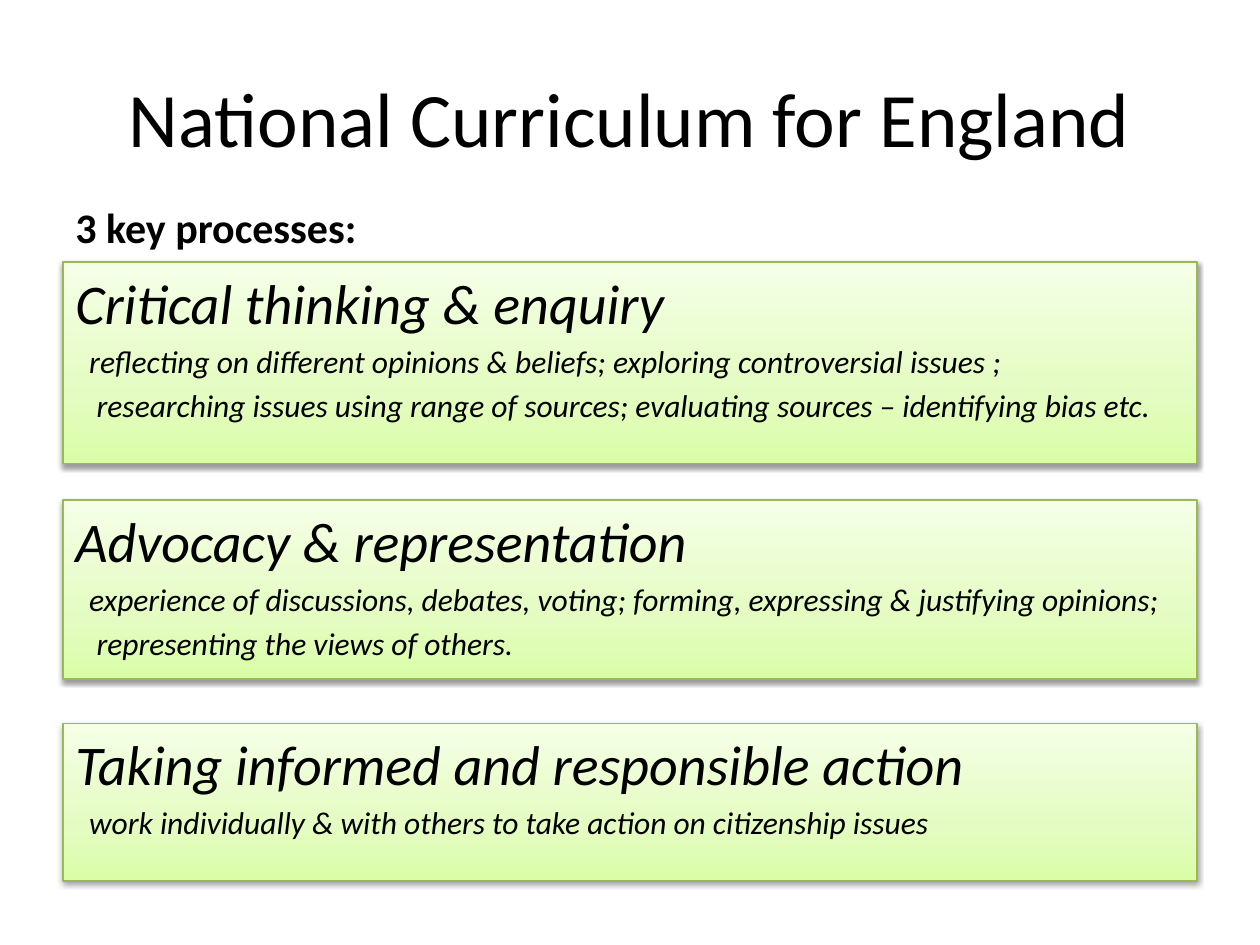
import pptx
import pptx.util
import pptx.dml.color
import pptx.enum.shapes
import pptx.enum.text
import pptx.oxml
import pptx.oxml.ns
from dataclasses import dataclass

Cm, Pt = pptx.util.Cm, pptx.util.Pt
RGB = pptx.dml.color.RGBColor.from_string
ALIGN = pptx.enum.text.PP_ALIGN
ANCHOR = pptx.enum.text.MSO_ANCHOR
NS = pptx.oxml.ns.nsdecls("a")


@dataclass(frozen=True)
class Theme:
    font: str = "Calibri"
    ink: str = "000000"
    edge: str = "98B955"
    fade: tuple = ((0, "DAFDA7"), (35, "E4FCC2"), (100, "F5FFE7"))
    title: int = 44
    head: int = 32
    lead: int = 24
    body: int = 18


THEME = Theme()
LEFT, WIDTH = 1.27, 22.86
STEPS = (0.28, 0.43)  # indents of the first and second detail line

# Top, height, heading and detail lines of each panel
PANELS = (
    (5.28, 4.06, "Critical thinking & enquiry", (
        "reflecting on different opinions & beliefs; exploring controversial issues ;",
        "researching issues using range of sources; evaluating sources – identifying bias etc.")),
    (10.08, 3.61, "Advocacy & representation", (
        "experience of discussions, debates, voting; forming, expressing & justifying opinions;",
        "representing the views of others.")),
    (14.58, 3.18, "Taking informed and responsible action", (
        "work individually & with others to take action on citizenship issues",)),
)


def write(para, text, size, **style):
    """Put one styled run into a paragraph."""
    run = para.add_run()
    run.text = text
    look = {"name": THEME.font, "size": Pt(size), **style}
    for key, value in look.items():
        setattr(run.font, key, value)
    run.font.color.rgb = RGB(THEME.ink)


def label(slide, box, text, size, align, anchor, **style):
    """Add a plain text box with one line."""
    frame = slide.shapes.add_textbox(*map(Cm, box)).text_frame
    frame.word_wrap = True
    frame.vertical_anchor = anchor
    para = frame.paragraphs[0]
    para.alignment = align
    write(para, text, size, **style)


def paint(shape):
    """Give a panel its gradient, outline and soft shadow."""
    shape.fill.gradient()
    shape.fill.gradient_angle = 90
    stops = shape._element.spPr.find(".//" + pptx.oxml.ns.qn("a:gsLst"))
    stops[:] = [pptx.oxml.parse_xml(
        f'<a:gs {NS} pos="{pos * 1000}"><a:srgbClr val="{tone}"/></a:gs>')
        for pos, tone in THEME.fade]
    shape.line.color.rgb = RGB(THEME.edge)
    shape.line.width = Pt(0.75)
    shape.shadow.inherit = False
    effects = shape._element.spPr.find(pptx.oxml.ns.qn("a:effectLst"))
    effects.append(pptx.oxml.parse_xml(
        f'<a:outerShdw {NS} blurRad="40000" dist="20000" dir="5400000" rotWithShape="0">'
        f'<a:srgbClr val="{THEME.ink}"><a:alpha val="38000"/></a:srgbClr></a:outerShdw>'))


def space(para, indent):
    """Set the left indent and a gap above of 20 percent."""
    props = para._p.get_or_add_pPr()
    props.set("marL", str(Cm(indent)))
    props.append(pptx.oxml.parse_xml(
        f'<a:spcBef {NS}><a:spcPct val="20000"/></a:spcBef>'))


def panel(slide, top, height, head, lines):
    """Add a panel with a heading and its detail lines."""
    kind = pptx.enum.shapes.MSO_SHAPE.RECTANGLE
    shape = slide.shapes.add_shape(kind, *map(Cm, (LEFT, top, WIDTH, height)))
    paint(shape)
    frame = shape.text_frame
    frame.word_wrap = True
    frame.vertical_anchor = ANCHOR.TOP
    rows = [(head, THEME.head, 0)]
    rows += [(line, THEME.body, step) for line, step in zip(lines, STEPS)]
    for i, (text, size, indent) in enumerate(rows):
        para = frame.add_paragraph() if i else frame.paragraphs[0]
        para.alignment = ALIGN.LEFT
        space(para, indent)
        write(para, text, size, italic=True)


def main():
    deck = pptx.Presentation()
    deck.slide_width, deck.slide_height = Cm(25.4), Cm(19.05)
    slide = deck.slides.add_slide(deck.slide_layouts[6])

    # Title and lead-in
    label(slide, (LEFT, 0.76, WIDTH, 3.18), "National Curriculum for England",
          THEME.title, ALIGN.CENTER, ANCHOR.MIDDLE)
    label(slide, (LEFT, 3.94, 11.84, 2.06), "3 key processes:",
          THEME.lead, ALIGN.LEFT, ANCHOR.TOP, bold=True)

    # The three processes
    for item in PANELS:
        panel(slide, *item)

    deck.save("out.pptx")


if __name__ == "__main__":
    main()
